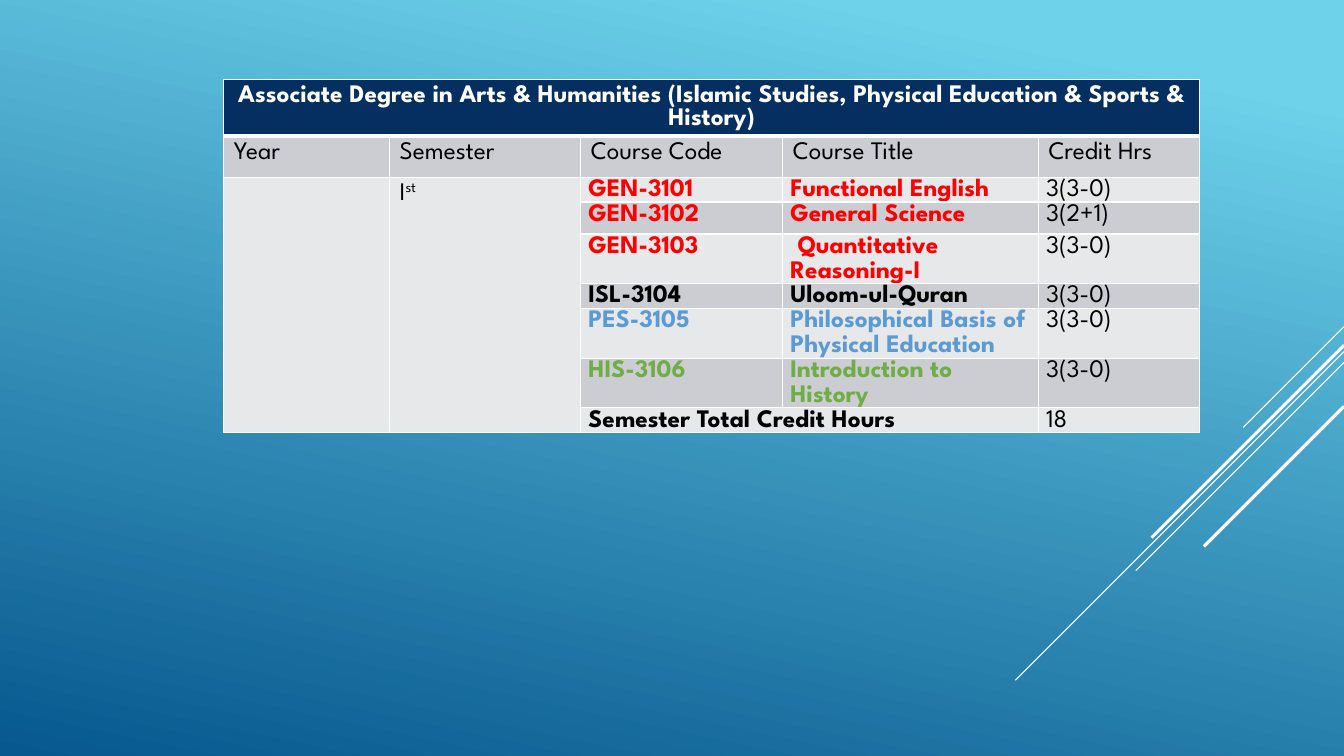
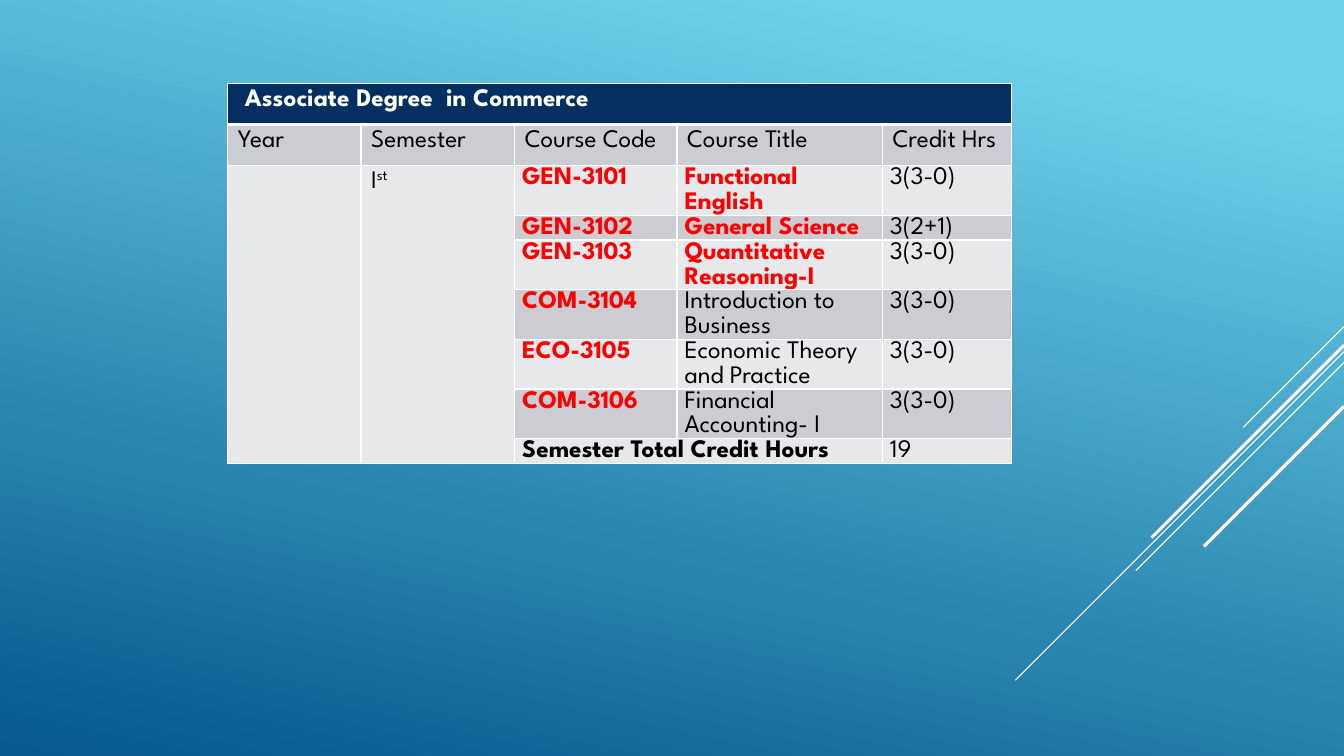
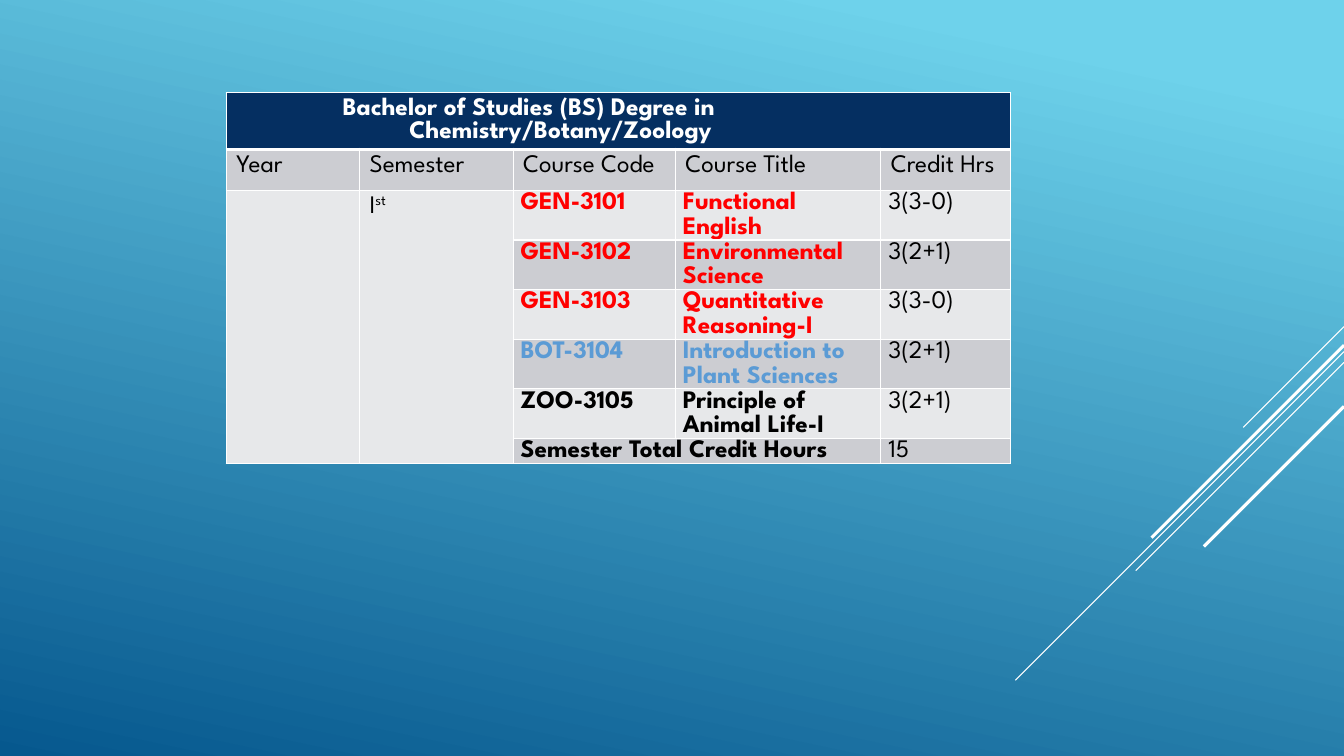
"""Build three slides that list the first-semester courses of degree programmes."""
from dataclasses import dataclass

from lxml import etree
from pptx import Presentation
from pptx import util as u
from pptx.dml import color
from pptx.enum import shapes, text
from pptx.oxml import ns

FONT = "League Spartan"
COLOURS = {
    "sky": "6ED2EB", "sea": "06588E", "navy": "052F61", "white": "FFFFFF",
    "dark": "CCCDD2", "light": "E7E8EA", "black": "000000",
    "red": "FF0000", "blue": "5B9BD5", "green": "70AD47",
}
COLUMN_SHARES = (0.17, 0.196, 0.207, 0.262, 0.165)
COLUMN_HEADS = ("Year", "Semester", "Course Code", "Course Title", "Credit Hrs")
LINE_HEIGHT = 0.62
HEAD_HEIGHT = 1.03
BODY_MARGINS = {"margin_left": u.Cm(0.19), "margin_right": u.Cm(0.19),
                "margin_top": 0, "margin_bottom": 0}
STREAKS = ((8.23, 2.54, 0.75), (8.86, 8.28, 0.75), (9.13, 5.25, 0.75),
           (8.7, 4.85, 2.25), (10.24, 3.53, 2.25))


@dataclass
class Course:
    """A course, its colour, its height in lines, and its title's format."""
    code: str
    title: str
    hours: str
    tint: str = "red"
    lines: float = 2
    plain_title: bool = False
    first_indent: float = 0


@dataclass
class Programme:
    """A degree programme with heading lines as (text, indent) pairs."""
    heading: tuple
    box: tuple
    heading_height: float
    courses: tuple
    total: str
    heading_align: object = text.PP_ALIGN.LEFT


PROGRAMMES = (
    Programme(
        (("Associate Degree in Arts & Humanities (Islamic Studies, "
          "Physical Education & Sports & History)", 0),),
        (5.64, 2.01, 24.59), 1.42,
        (Course("GEN-3101", "Functional English", "3(3-0)", lines=1),
         Course("GEN-3102", "General Science", "3(2+1)", lines=1.3),
         Course("GEN-3103", "Quantitative Reasoning-I", "3(3-0)", first_indent=0.18),
         Course("ISL-3104", "Uloom-ul-Quran", "3(3-0)", "black", 1),
         Course("PES-3105", "Philosophical Basis of Physical Education", "3(3-0)", "blue"),
         Course("HIS-3106", "Introduction to History", "3(3-0)", "green")),
        "18", text.PP_ALIGN.CENTER),
    Programme(
        (("Associate Degree  in Commerce", 0.18),),
        (5.74, 2.11, 19.76), HEAD_HEIGHT,
        (Course("GEN-3101", "Functional English", "3(3-0)"),
         Course("GEN-3102", "General Science", "3(2+1)", lines=1),
         Course("GEN-3103", "Quantitative Reasoning-I", "3(3-0)"),
         Course("COM-3104", "Introduction to Business", "3(3-0)", plain_title=True),
         Course("ECO-3105", "Economic Theory and Practice", "3(3-0)", plain_title=True),
         Course("COM-3106", "Financial Accounting- I", "3(3-0)", plain_title=True)),
        "19"),
    Programme(
        (("Bachelor of Studies (BS) Degree in", 2.68),
         ("Chemistry/Botany/Zoology", 4.36)),
        (5.7, 2.34, 19.76), 1.42,
        (Course("GEN-3101", "Functional English", "3(3-0)"),
         Course("GEN-3102", "Environmental Science", "3(2+1)"),
         Course("GEN-3103", "Quantitative Reasoning-I", "3(3-0)"),
         Course("BOT-3104", "Introduction to Plant Sciences", "3(2+1)", "blue"),
         Course("ZOO-3105", "Principle of Animal Life-I", "3(2+1)", "black")),
        "15"),
)


def rgb(name):
    """Return the named colour."""
    return color.RGBColor.from_string(COLOURS[name])


def set_all(target, values):
    """Set each attribute in values on the target."""
    for name, value in values.items():
        setattr(target, name, value)


def add_span(para, words, tint="black", bold=False):
    """Add a formatted run to a paragraph and return it."""
    span = para.add_run()
    span.text = words
    set_all(span.font, {"name": FONT, "size": u.Pt(18), "bold": bold})
    span.font.color.rgb = rgb(tint)
    return span


def indent(para, first, rest=0):
    """Indent the first line and the following lines of a paragraph."""
    settings = para._p.get_or_add_pPr()
    settings.set("marL", str(u.Cm(rest)))
    settings.set("indent", str(u.Cm(first) - u.Cm(rest)))


def write_body(cell, words, tint="black", bold=False):
    """Write one tight line of course data and return its paragraph."""
    set_all(cell, BODY_MARGINS)
    para = cell.text_frame.paragraphs[0]
    para.line_spacing = 1.07
    add_span(para, words, tint, bold)
    return para


def style_cell(cell, fill, top, bottom):
    """Give a cell white borders and a solid fill."""
    settings = cell._tc.get_or_add_tcPr()
    for side, width in (("L", 1), ("R", 1), ("T", top), ("B", bottom)):
        border = etree.SubElement(settings, ns.qn(f"a:ln{side}"), w=str(u.Pt(width)))
        paint = etree.SubElement(border, ns.qn("a:solidFill"))
        etree.SubElement(paint, ns.qn("a:srgbClr"), val=COLOURS["white"])
    cell.fill.solid()
    cell.fill.fore_color.rgb = rgb(fill)


def style_grid(table):
    """Fill the heading row and alternate the shades of the rows below."""
    last = len(table.rows) - 1
    for number, row in enumerate(table.rows):
        for column, cell in enumerate(row.cells):
            shade = "dark" if number % 2 and (number == 1 or column > 1) else "light"
            style_cell(cell, shade if number else "navy",
                       3 if number == 1 else 1, 3 if number == 0 else 1)
    table.cell(0, 0).merge(table.cell(0, 4))
    for column in (0, 1):
        table.cell(2, column).merge(table.cell(last, column))
    table.cell(last, 2).merge(table.cell(last, 3))


def write_heading(cell, programme):
    """Write the programme's name in the top row."""
    frame = cell.text_frame
    for number, (words, offset) in enumerate(programme.heading):
        para = frame.add_paragraph() if number else frame.paragraphs[0]
        para.alignment = programme.heading_align
        indent(para, offset, offset)
        add_span(para, words, "white", True)


def write_course(table, number, course):
    """Write a course into the last three cells of a row."""
    write_body(table.cell(number, 2), course.code, course.tint, True)
    title_tint = "black" if course.plain_title else course.tint
    para = write_body(table.cell(number, 3), course.title, title_tint,
                      not course.plain_title)
    if course.first_indent:
        indent(para, course.first_indent)
    write_body(table.cell(number, 4), course.hours)


def add_programme_table(page, programme):
    """Place a programme's course table in its box."""
    left, top, width = programme.box
    heights = [programme.heading_height, HEAD_HEIGHT]
    heights += [course.lines * LINE_HEIGHT for course in programme.courses]
    heights.append(LINE_HEIGHT)
    table = page.shapes.add_table(
        len(heights), len(COLUMN_SHARES), u.Cm(left), u.Cm(top),
        u.Cm(width), u.Cm(sum(heights))).table
    set_all(table, {"first_row": False, "horz_banding": False})
    for row, height in zip(table.rows, heights):
        row.height = u.Cm(height)
    for column, share in zip(table.columns, COLUMN_SHARES):
        column.width = u.Cm(width * share)
    style_grid(table)
    write_heading(table.cell(0, 0), programme)
    for column, words in enumerate(COLUMN_HEADS):
        add_span(table.cell(1, column).text_frame.paragraphs[0], words)
    semester = table.cell(2, 1).text_frame.paragraphs[0]
    add_span(semester, "I")
    add_span(semester, "st")._r.get_or_add_rPr().set("baseline", "30000")
    for number, course in enumerate(programme.courses, 2):
        write_course(table, number, course)
    last = len(heights) - 1
    write_body(table.cell(last, 2), "Semester Total Credit Hours", bold=True)
    write_body(table.cell(last, 4), programme.total)


def paint_background(master):
    """Give the master its diagonal blue gradient."""
    fill = master.background.fill
    fill.gradient()
    fill.gradient_angle = 258
    for stop, (name, position) in zip(fill.gradient_stops, (("sky", 0.1), ("sea", 1))):
        stop.position = position
        stop.color.rgb = rgb(name)


def add_streaks(master, page, right):
    """Draw the 45-degree streaks from the right edge and keep them on the master."""
    for number, (top, reach, weight) in enumerate(STREAKS, 1):
        streak = page.shapes.add_connector(
            shapes.MSO_CONNECTOR.STRAIGHT, right, u.Cm(top),
            right - u.Cm(reach), u.Cm(top + reach))
        streak.line.width = u.Pt(weight)
        streak.line.color.rgb = rgb("white")
        etree.SubElement(streak.element.spPr, ns.qn("a:effectLst"))
        set_all(streak.element.nvCxnSpPr.cNvPr, {"id": 20 + number, "name": f"Streak {number}"})
        master.shapes.element.append(streak.element)


def main():
    """Build and save the deck."""
    deck = Presentation()
    set_all(deck, {"slide_width": u.Cm(33.87), "slide_height": u.Cm(19.05)})
    paint_background(deck.slide_master)
    pages = [deck.slides.add_slide(deck.slide_layouts[6]) for _ in PROGRAMMES]
    add_streaks(deck.slide_master, pages[0], deck.slide_width)
    for page, programme in zip(pages, PROGRAMMES):
        add_programme_table(page, programme)
    deck.save("out.pptx")


if __name__ == "__main__":
    main()
